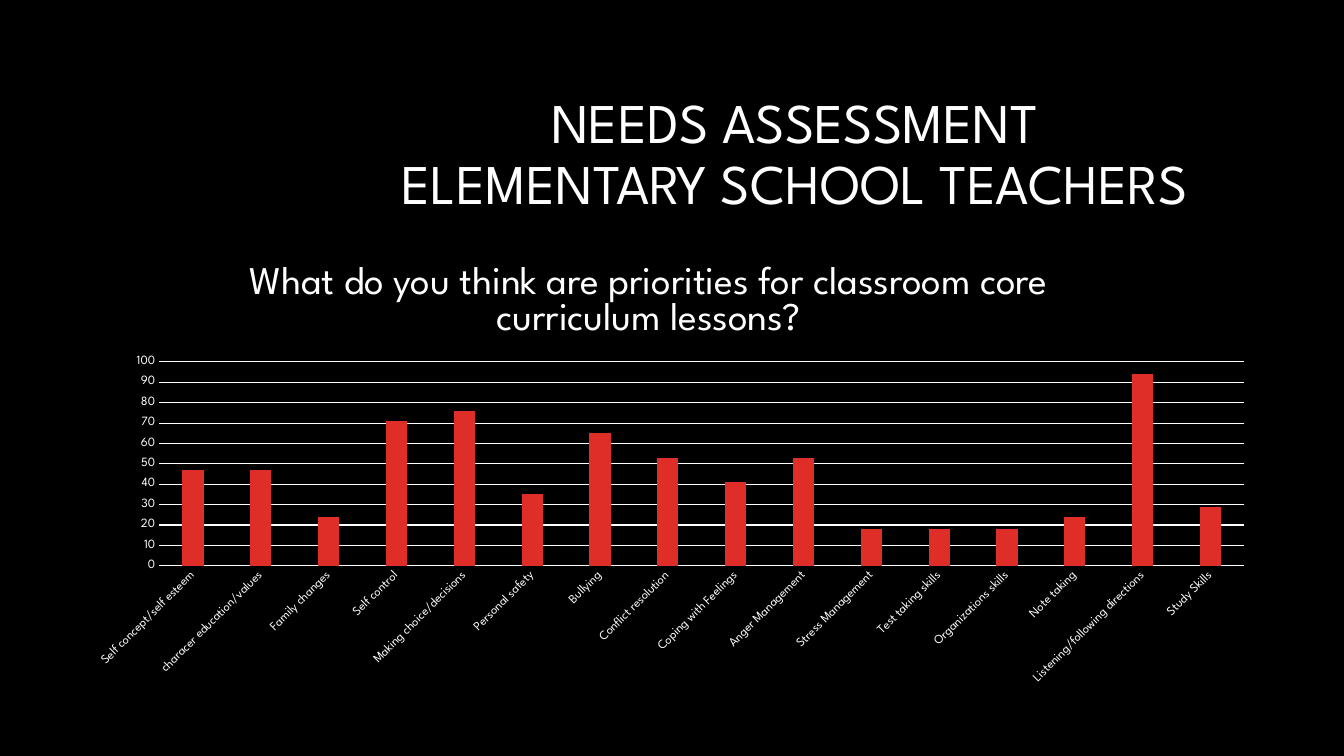
from dataclasses import dataclass

from lxml import etree
from pptx import Presentation
from pptx.chart.data import CategoryChartData
from pptx.dml.color import RGBColor
from pptx.enum.chart import XL_CHART_TYPE, XL_TICK_MARK
from pptx.enum.text import MSO_ANCHOR, MSO_AUTO_SIZE, PP_ALIGN
from pptx.oxml.ns import qn
from pptx.util import Pt

COLUMN = XL_CHART_TYPE.COLUMN_CLUSTERED
NO_TICK = XL_TICK_MARK.NONE
MIDDLE = MSO_ANCHOR.MIDDLE
NO_FIT = MSO_AUTO_SIZE.NONE
CENTER = PP_ALIGN.CENTER

PX = 9144  # 100 px to the inch
FACE = "League Spartan"
WHITE, BLACK, RED = "FFFFFF", "000000", "DF2E28"


@dataclass
class Box:
    left: int
    top: int
    width: int
    height: int

    def emu(self) -> list[int]:
        return [n * PX for n in (self.left, self.top, self.width, self.height)]


@dataclass
class Topic:
    label: str
    score: int


TITLE_BOX = Box(317, 84, 942, 141)
CHART_BOX = Box(75, 249, 1183, 440)
TOPICS = [
    Topic("Self concept/self esteem", 47),
    Topic("characer education/values", 47),
    Topic("Family changes", 24),
    Topic("Self control", 71),
    Topic("Making choice/decisions", 76),
    Topic("Personal safety", 35),
    Topic("Bullying", 65),
    Topic("Conflict resolution", 53),
    Topic("Coping with Feelings", 41),
    Topic("Anger Management", 53),
    Topic("Stress Management", 18),
    Topic("Test taking skills", 18),
    Topic("Organizations skills", 18),
    Topic("Note taking", 24),
    Topic("Listening/following directions", 94),
    Topic("Study Skills", 29),
]


def color(code: str) -> RGBColor:
    return RGBColor.from_string(code)


def style(font, size: float) -> None:
    font.name = FACE
    font.size = Pt(size)
    font.bold = False
    font.color.rgb = color(WHITE)


def rule(line) -> None:
    line.width = Pt(0.75)
    line.color.rgb = color(WHITE)


def place(part, index: int, **marks: object) -> None:
    """Give a chart part a manual layout, as shares of the chart."""
    for old in part.findall(qn("c:layout")):
        part.remove(old)
    layout = etree.Element(qn("c:layout"))
    manual = etree.SubElement(layout, qn("c:manualLayout"))
    for tag, value in marks.items():
        etree.SubElement(manual, qn(f"c:{tag}")).set("val", str(value))
    part.insert(index, layout)


def add_title(slide) -> None:
    title = slide.shapes.title
    title.left, title.top, title.width, title.height = TITLE_BOX.emu()
    frame = title.text_frame
    frame.text = "NEEDS ASSESSMENT\vELEMENTARY SCHOOL TEACHERS"
    frame.word_wrap = True
    frame.auto_size = NO_FIT
    frame.vertical_anchor = MIDDLE
    para = frame.paragraphs[0]
    para.alignment = CENTER
    para.line_spacing = 0.9
    style(para.font, 40)


def add_scores(slide) -> None:
    data = CategoryChartData()
    data.categories = [topic.label for topic in TOPICS]
    data.add_series("Series 1", [topic.score for topic in TOPICS])
    chart = slide.shapes.add_chart(COLUMN, *CHART_BOX.emu(), data).chart
    style(chart.font, 10)
    chart.has_legend = False

    # Heading
    chart.has_title = True
    head = chart.chart_title
    para = head.text_frame.paragraphs[0]
    para.text = ("What do you think are priorities for classroom core "
                 "curriculum lessons?")
    style(para.font, 28)
    head.include_in_layout = False
    place(head._element, 1, xMode="edge", yMode="edge", x=0.14, y=0.01)

    # Columns
    plot = chart.plots[0]
    plot.gap_width = 219
    plot.overlap = -27
    plot.vary_by_categories = False
    fill = plot.series[0].format.fill
    fill.solid()
    fill.fore_color.rgb = color(RED)
    area = chart._chartSpace.chart.plotArea
    place(area, 0, layoutTarget="inner", xMode="edge", yMode="edge",
          x=0.07, y=0.25, w=0.91, h=0.46)

    # Axes
    names, scale = chart.category_axis, chart.value_axis
    for axis in (names, scale):
        axis.major_tick_mark = axis.minor_tick_mark = NO_TICK
        style(axis.tick_labels.font, 9)
    rule(names.format.line)
    body = names._element.find(qn("c:txPr")).find(qn("a:bodyPr"))
    body.set("rot", "-2700000")
    body.set("vert", "horz")
    scale.minimum_scale, scale.maximum_scale = 0, 100
    scale.major_unit = 10
    scale.format.line.fill.background()
    scale.has_major_gridlines = True
    rule(scale.major_gridlines.format.line)


def main() -> None:
    deck = Presentation()
    deck.slide_width, deck.slide_height = 1333 * PX, 750 * PX
    slide = deck.slides.add_slide(deck.slide_layouts[5])
    back = slide.background.fill
    back.solid()
    back.fore_color.rgb = color(BLACK)
    add_title(slide)
    add_scores(slide)
    deck.save("out.pptx")


if __name__ == "__main__":
    main()
